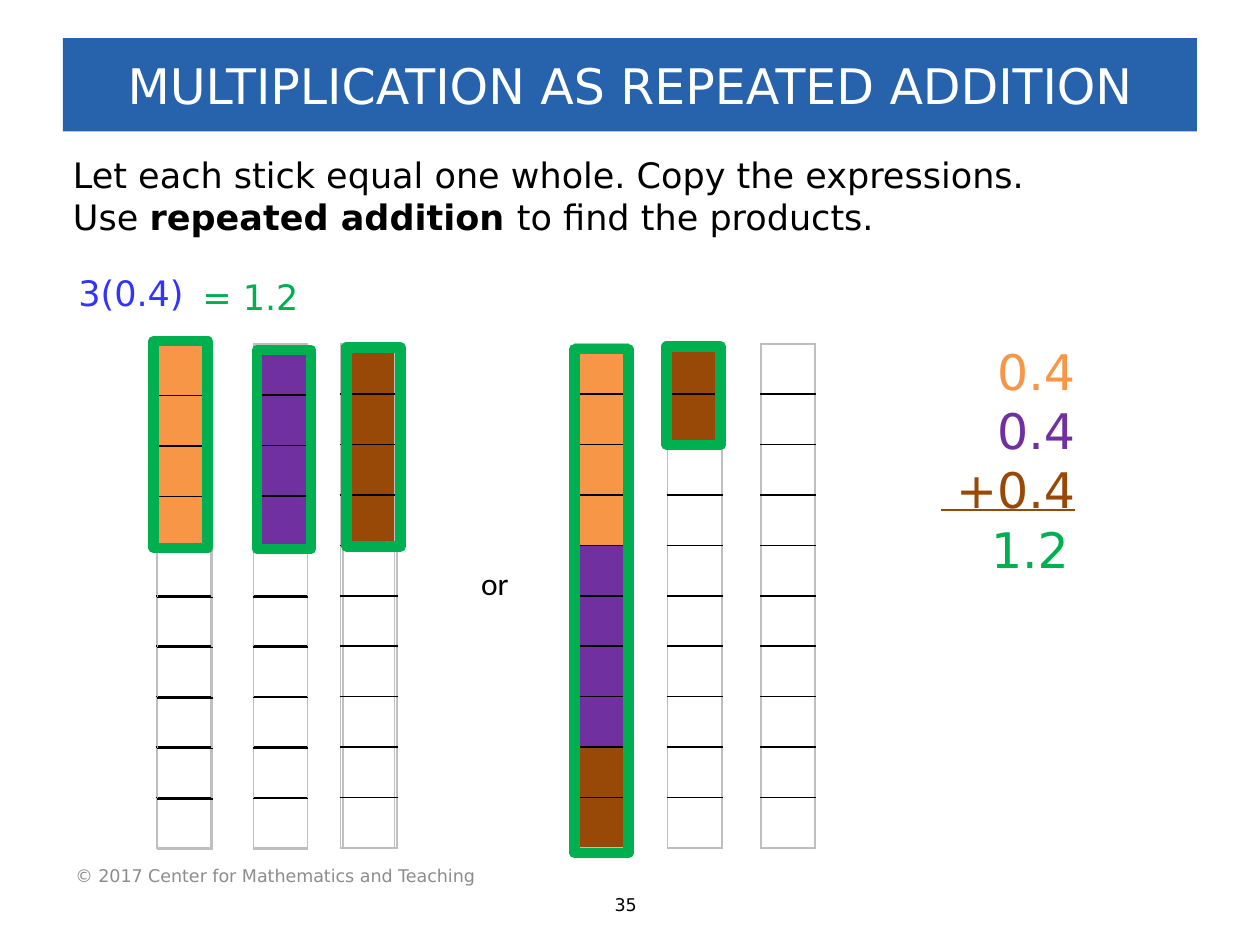
from lxml import etree
from pptx import Presentation
from pptx import util as u
from pptx.dml.color import RGBColor
from pptx.enum import shapes, text
from pptx.oxml.ns import qn

COLORS = {
    "white": "FFFFFF", "black": "000000", "banner": "2762AD", "gray": "8C8C8C",
    "edge": "BFBFBF", "blue": "3333FF", "green": "00B050", "orange": "F79646",
    "purple": "7030A0", "brown": "984807",
}
FONT = "DejaVu Sans"
PARTS = 10
STICK_WIDTH, PART_HEIGHT = 1.09, 1.016
STICKS_TOP = 6.93
BLANK, WHITE = [], ["white"] * PARTS

# Each stick: left, empty stick, coloured stick laid on it with its shift,
# and green frame (shift right, shift down, height)
ADDEND_STICKS = [
    (3.15, WHITE, ["orange"] * 4, (0.03, 0.03), (-0.05, -0.05, 4.17)),
    (5.11, BLANK, ["purple"] * 4, (0, 0.02), (0.07, 0.13, 4.01)),
    (6.91, BLANK, ["brown"] * 4, (-0.05, 0), (0.08, 0.08, 4.01)),
]
SUM_STICKS = [
    (11.58, WHITE, ["orange"] * 4 + ["purple"] * 4 + ["brown"] * 2, (0, 0),
     (0, 0.11, 10.16)),
    (13.46, BLANK, ["brown"] * 2, (0, 0), (-0.02, 0.06, 1.98)),
    (15.34, BLANK, None, None, None),
]


def rgb(name):
    return RGBColor.from_string(COLORS[name])


def lengths(values):
    return [u.Cm(value) for value in values]


def write(frame, lines, align=text.PP_ALIGN.LEFT, **shared):
    """Fill a text frame; each line is a list of (wording, format) spans."""
    for index, line in enumerate(lines):
        para = frame.paragraphs[0] if index == 0 else frame.add_paragraph()
        para.alignment = align
        for wording, extra in line:
            span = para.add_run()
            span.text = wording
            style = {"name": FONT, "color": "black", **shared, **extra}
            span.font.color.rgb = rgb(style.pop("color"))
            for key, value in style.items():
                setattr(span.font, key, value)


def add_text(page, area, lines, anchor=text.MSO_ANCHOR.TOP, wrap=True, **style):
    box = page.shapes.add_textbox(*lengths(area))
    box.text_frame.word_wrap = wrap
    box.text_frame.vertical_anchor = anchor
    write(box.text_frame, lines, **style)


def add_rectangle(page, area):
    box = page.shapes.add_shape(shapes.MSO_SHAPE.RECTANGLE, *lengths(area))
    box.shadow.inherit = False
    return box


def add_banner(page, area):
    banner = add_rectangle(page, area)
    banner.fill.solid()
    banner.fill.fore_color.rgb = rgb("banner")
    banner.line.fill.background()
    banner.text_frame.vertical_anchor = text.MSO_ANCHOR.MIDDLE
    write(banner.text_frame, [[("MULTIPLICATION AS REPEATED ADDITION", {})]],
          align=text.PP_ALIGN.CENTER, size=u.Pt(28), color="white")


def set_borders(cell, sides):
    """Draw 1 pt cell borders; sides maps a border tag to a colour name."""
    properties = cell._tc.get_or_add_tcPr()
    for position, (side, color) in enumerate(sides.items()):
        border = etree.Element(qn(f"a:{side}"), w=str(u.Pt(1)))
        fill = etree.SubElement(border, qn("a:solidFill"))
        etree.SubElement(fill, qn("a:srgbClr"), val=COLORS[color])
        properties.insert(position, border)


def add_stick(page, left, top, parts):
    """A bar of ten tenths; the tenths beyond the given parts stay clear."""
    area = (left, top, STICK_WIDTH, PART_HEIGHT * PARTS)
    table = page.shapes.add_table(PARTS, 1, *lengths(area)).table
    table.first_row = table.horz_banding = False
    for index in range(PARTS):
        cell = table.cell(index, 0)
        for side in ("left", "right", "top", "bottom"):
            setattr(cell, f"margin_{side}", 0)
        cell.text_frame.paragraphs[0].font.size = u.Pt(12)
        if index < len(parts):
            cell.fill.solid()
            cell.fill.fore_color.rgb = rgb(parts[index])
        else:
            cell.fill.background()
        set_borders(cell, {
            "lnL": "edge", "lnR": "edge",
            "lnT": "black" if index else "edge",
            "lnB": "black" if index < PARTS - 1 else "edge",
        })


def add_frame(page, area):
    outline = add_rectangle(page, area)
    outline.fill.background()
    outline.line.color.rgb = rgb("green")
    outline.line.width = u.Pt(6)


def add_sticks(page, top, sticks):
    for left, empty, parts, shift, frame in sticks:
        add_stick(page, left, top, empty)
        if parts:
            add_stick(page, left + shift[0], top + shift[1], parts)
            right, down, height = frame
            add_frame(page, (left + right, top + down, STICK_WIDTH, height))


def add_instructions(page, area):
    add_text(page, area, [
        [("Let each stick equal one whole. Copy the expressions.", {})],
        [("Use ", {}), ("repeated addition ", {"bold": True}),
         ("to find the products.", {})],
    ], size=u.Pt(20))


def add_equation(page, left, top):
    add_text(page, (left, top, 2.92, 1.12), [[("3(0.4)", {})]],
             size=u.Pt(20), color="blue")
    add_text(page, (left + 2.5, top + 0.08, 2.9, 1.12), [[("= 1.2", {})]],
             size=u.Pt(20), color="green")


def add_column_sum(page, left, top):
    add_text(page, (left, top, 4.04, 5.05), [
        [("0.4", {"color": "orange"})],
        [("0.4", {"color": "purple"})],
        [(" +0.4", {"color": "brown", "underline": True})],
    ], align=text.PP_ALIGN.RIGHT, size=u.Pt(28))
    add_text(page, (left + 1.85, top + 3.58, 2.46, 1.45), [[("1.2", {})]],
             size=u.Pt(28), color="green")


def add_footer(page):
    add_text(page, (1.27, 17.15, 8.81, 1.02),
             [[("© 2017 Center for Mathematics and Teaching", {})]],
             anchor=text.MSO_ANCHOR.MIDDLE, size=u.Pt(10), color="gray")
    add_text(page, (12.14, 17.9, 1.12, 0.69), [[("35", {})]], wrap=False,
             size=u.Pt(10))


def main():
    deck = Presentation()
    deck.slide_width, deck.slide_height = lengths((25.4, 19.05))
    page = deck.slides.add_slide(deck.slide_layouts[6])
    add_banner(page, (1.27, 0.77, 22.86, 1.88))
    add_instructions(page, (1.22, 2.97, 21.82, 1.96))
    add_equation(page, 1.33, 5.34)
    add_sticks(page, STICKS_TOP, ADDEND_STICKS)
    add_text(page, (9.45, 11.25, 1.07, 1.02), [[("or", {})]], wrap=False,
             size=u.Pt(18), name="Calibri")
    add_sticks(page, STICKS_TOP, SUM_STICKS)
    add_column_sum(page, 17.88, 6.76)
    add_footer(page)
    deck.save("out.pptx")


if __name__ == "__main__":
    main()
